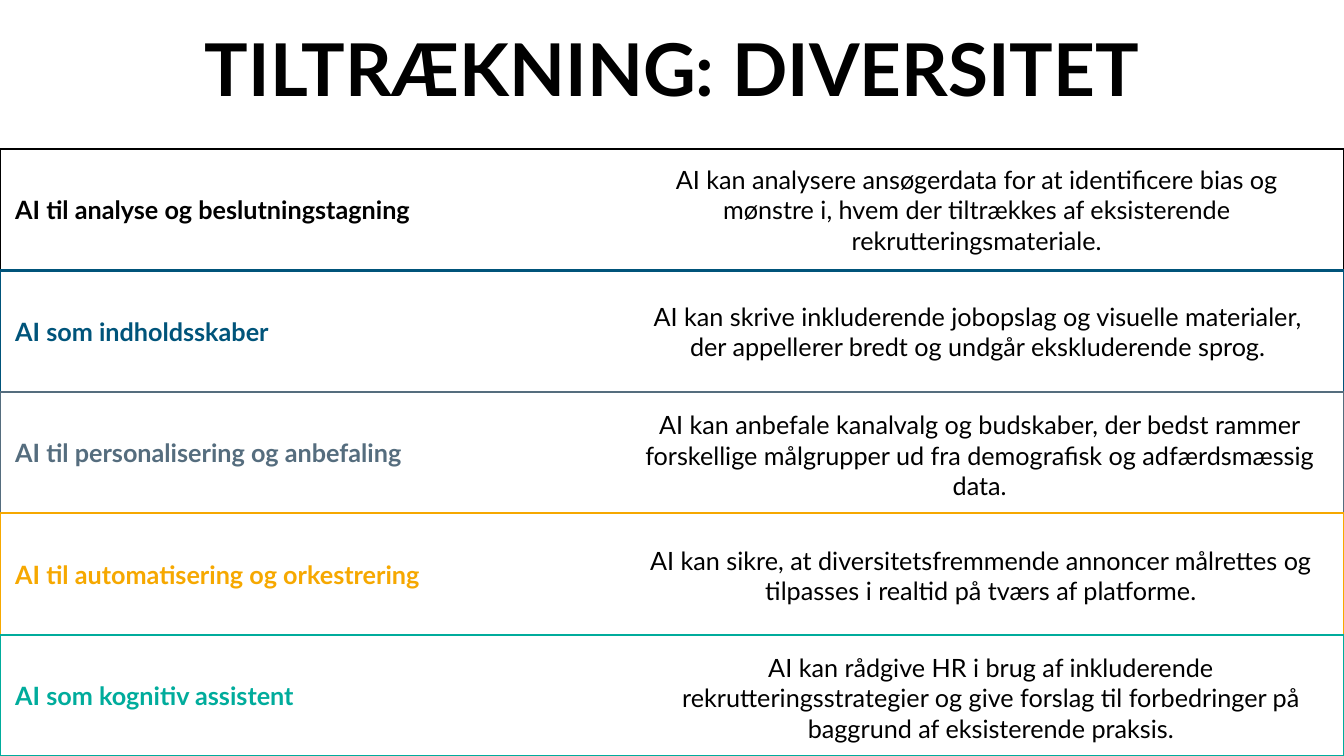
from dataclasses import dataclass

from pptx import Presentation
from pptx import util as u
from pptx.dml import color
from pptx.enum import shapes, text


@dataclass(frozen=True)
class Theme:
    font: str = "Lato"
    ink: str = "000000"
    blue: str = "00547A"
    slate: str = "556D7E"
    amber: str = "F6A800"
    teal: str = "00AC9C"
    title: float = 52
    body: float = 18
    line: float = 1.5


THEME = Theme()
WIDE, HIGH = 960, 540

# Colour, label, body text, and the body's left edge and drop within its row
ROWS = [
    (THEME.ink, " AI til analyse og beslutningstagning",
     "AI kan analysere ansøgerdata for at identificere bias og mønstre i, "
     "hvem der tiltrækkes af eksisterende rekrutteringsmateriale.", 445.7, 0),
    (THEME.blue, " AI som indholdsskaber",
     "AI kan skrive inkluderende jobopslag og visuelle materialer, "
     "der appellerer bredt og undgår ekskluderende sprog.", 446.4, 0),
    (THEME.slate, " AI til personalisering og anbefaling",
     "AI kan anbefale kanalvalg og budskaber, der bedst rammer forskellige "
     "målgrupper ud fra demografisk og adfærdsmæssig data.", 447.8, 1.8),
    (THEME.amber, " AI til automatisering og orkestrering",
     "AI kan sikre, at diversitetsfremmende annoncer målrettes og "
     "tilpasses i realtid på tværs af platforme.", 448.6, 0.8),
    (THEME.teal, " AI som kognitiv assistent",
     "AI kan rådgive HR i brug af inkluderende rekrutteringsstrategier og "
     "give forslag til forbedringer på baggrund af eksisterende praksis.",
     455.8, 1.8),
]


def write(shape, words, size, tint, bold, align):
    frame = shape.text_frame
    frame.word_wrap = True
    frame.vertical_anchor = text.MSO_ANCHOR.MIDDLE
    para = frame.paragraphs[0]
    para.alignment = align
    run = para.add_run()
    run.text = words
    run.font.name = THEME.font
    run.font.size = u.Pt(size)
    run.font.bold = bold
    run.font.color.rgb = color.RGBColor.from_string(tint)


def add_text(slide, box, words, size, bold=False):
    shape = slide.shapes.add_textbox(*map(u.Pt, box))
    write(shape, words, size, THEME.ink, bold, text.PP_ALIGN.CENTER)


def add_band(slide, box, tint, label):
    band = slide.shapes.add_shape(shapes.MSO_SHAPE.RECTANGLE, *map(u.Pt, box))
    band.shadow.inherit = False
    band.fill.background()
    band.line.color.rgb = color.RGBColor.from_string(tint)
    band.line.width = u.Pt(THEME.line)
    write(band, label, THEME.body, tint, True, text.PP_ALIGN.LEFT)


def add_rows(slide, box):
    left, top, width, height = box
    step = height / len(ROWS)
    # Outlined bands with their labels
    for i, (tint, label, *_) in enumerate(ROWS):
        add_band(slide, (left, top + i * step, width, step), tint, label)
    # Body texts on the right
    for i, (_, _, body, inset, drop) in enumerate(ROWS):
        place = (left + inset, top + i * step + drop, 504, step)
        add_text(slide, place, body, THEME.body)


def main():
    deck = Presentation()
    deck.slide_width, deck.slide_height = u.Pt(WIDE), u.Pt(HIGH)
    slide = deck.slides.add_slide(deck.slide_layouts[6])

    # Rows below, title above
    top = 106.5
    add_rows(slide, (0, top, WIDE, HIGH - top))
    add_text(slide, (0, 0, WIDE, 96.5), "TILTRÆKNING: DIVERSITET",
             THEME.title, bold=True)
    deck.save("out.pptx")


if __name__ == "__main__":
    main()
